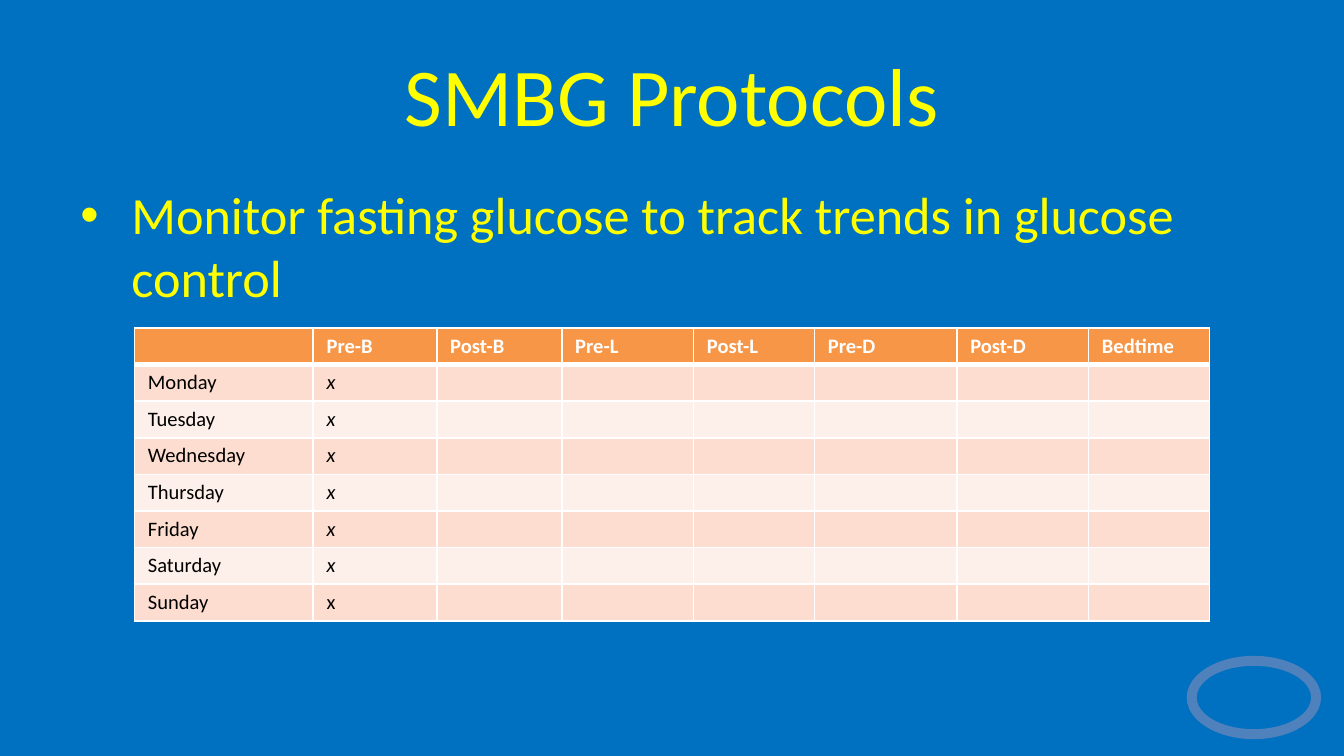
"""Build the SMBG protocols slide with its weekly glucose monitoring grid."""
from dataclasses import dataclass

from lxml import etree
from pptx import Presentation
from pptx import util as u
from pptx.dml.color import RGBColor
from pptx.enum import shapes, text
from pptx.oxml.ns import qn

TITLE = "SMBG Protocols"
ADVICE = "Monitor fasting glucose to track trends in glucose control"
CHECKS = ["Pre-B", "Post-B", "Pre-L", "Post-L", "Pre-D", "Post-D", "Bedtime"]
DAYS = ["Monday", "Tuesday", "Wednesday", "Thursday", "Friday", "Saturday", "Sunday"]
MARK = "x"
UPRIGHT_MARK_DAY = "Sunday"

WIDTH = 10
HEIGHT = WIDTH * 9 / 16
MARGIN = 0.5
COLUMNS = [1.33, 0.92, 0.93, 0.98, 0.9, 1.06, 0.98, 0.9]
GRID_LEFT, GRID_TOP, GRID_HEIGHT = 1, 2.44, 2.18
HANGING = 0.38
THIN, THICK = 1, 3


@dataclass(frozen=True)
class Theme:
    font: str = "Calibri"
    background: str = "0070C0"
    heading: str = "FFFF00"
    header: str = "F79646"
    bands: tuple = ("FCDDCF", "FDEFE9")
    rule: str = "FFFFFF"
    header_ink: str = "FFFFFF"
    ink: str = "000000"
    ring: str = "4F81BD"
    title_size: int = 44
    advice_size: int = 28
    cell_size: int = 11


THEME = Theme()


def paint(fill, color):
    fill.solid()
    fill.fore_color.rgb = RGBColor.from_string(color)


def write(paragraph, words, size, color, bold=False, italic=False):
    run = paragraph.add_run()
    run.text = words
    font = run.font
    font.name, font.size, font.bold, font.italic = THEME.font, u.Pt(size), bold, italic
    font.color.rgb = RGBColor.from_string(color)


def add_frame(slide, top, height, anchor):
    frame = slide.shapes.add_textbox(
        u.Inches(MARGIN), u.Inches(top), u.Inches(WIDTH - 2 * MARGIN), u.Inches(height)
    ).text_frame
    frame.word_wrap = True
    frame.vertical_anchor = anchor
    return frame


def hang_bullet(paragraph):
    properties = paragraph._p.get_or_add_pPr()
    indent = u.Inches(HANGING)
    properties.set("marL", str(indent))
    properties.set("indent", str(-indent))
    etree.SubElement(properties, qn("a:buFont"), typeface="Arial")
    etree.SubElement(properties, qn("a:buChar"), char="•")


def rule_cell(cell, top, bottom):
    properties = cell._tc.get_or_add_tcPr()
    for side, weight in (("L", THIN), ("R", THIN), ("T", top), ("B", bottom)):
        line = etree.SubElement(properties, qn(f"a:ln{side}"), w=str(u.Pt(weight)))
        fill = etree.SubElement(line, qn("a:solidFill"))
        etree.SubElement(fill, qn("a:srgbClr"), val=THEME.rule)


def fill_grid(slide):
    rows = [["", *CHECKS]] + [[day, MARK] + [""] * (len(CHECKS) - 1) for day in DAYS]
    grid = slide.shapes.add_table(
        len(rows), len(COLUMNS), u.Inches(GRID_LEFT), u.Inches(GRID_TOP),
        u.Inches(sum(COLUMNS)), u.Inches(GRID_HEIGHT),
    ).table
    for column, width in zip(grid.columns, COLUMNS):
        column.width = u.Inches(width)
    for r, row in enumerate(rows):
        heading = r == 0
        grid.rows[r].height = u.Inches(GRID_HEIGHT / len(rows))
        for c, words in enumerate(row):
            cell = grid.cell(r, c)
            cell.margin_left = cell.margin_right = u.Inches(0.1)
            cell.margin_top = cell.margin_bottom = u.Inches(0.04)
            rule_cell(cell, THICK if r == 1 else THIN, THICK if heading else THIN)
            paint(cell.fill, THEME.header if heading else THEME.bands[(r - 1) % 2])
            paragraph = cell.text_frame.paragraphs[0]
            if words:
                write(paragraph, words, THEME.cell_size,
                      THEME.header_ink if heading else THEME.ink, bold=heading,
                      italic=words == MARK and row[0] != UPRIGHT_MARK_DAY)
            else:
                etree.SubElement(paragraph._p, qn("a:endParaRPr"), sz=str(THEME.cell_size * 100))


def main():
    deck = Presentation()
    deck.slide_width, deck.slide_height = u.Inches(WIDTH), u.Inches(HEIGHT)
    slide = deck.slides.add_slide(deck.slide_layouts[6])
    paint(slide.background.fill, THEME.background)

    title = add_frame(slide, 0.23, 0.94, text.MSO_ANCHOR.MIDDLE).paragraphs[0]
    title.alignment = text.PP_ALIGN.CENTER
    write(title, TITLE, THEME.title_size, THEME.heading)

    ring = slide.shapes.add_shape(
        shapes.MSO_SHAPE.DONUT, u.Inches(8.83), u.Inches(4.88), u.Inches(1), u.Inches(0.62)
    )
    ring.adjustments[0] = 0.12
    ring.shadow.inherit = False
    paint(ring.fill, THEME.ring)
    ring.line.fill.background()

    advice = add_frame(slide, 1.31, 2.17, text.MSO_ANCHOR.TOP).paragraphs[0]
    hang_bullet(advice)
    write(advice, ADVICE, THEME.advice_size, THEME.heading)

    fill_grid(slide)
    deck.save("out.pptx")


if __name__ == "__main__":
    main()
